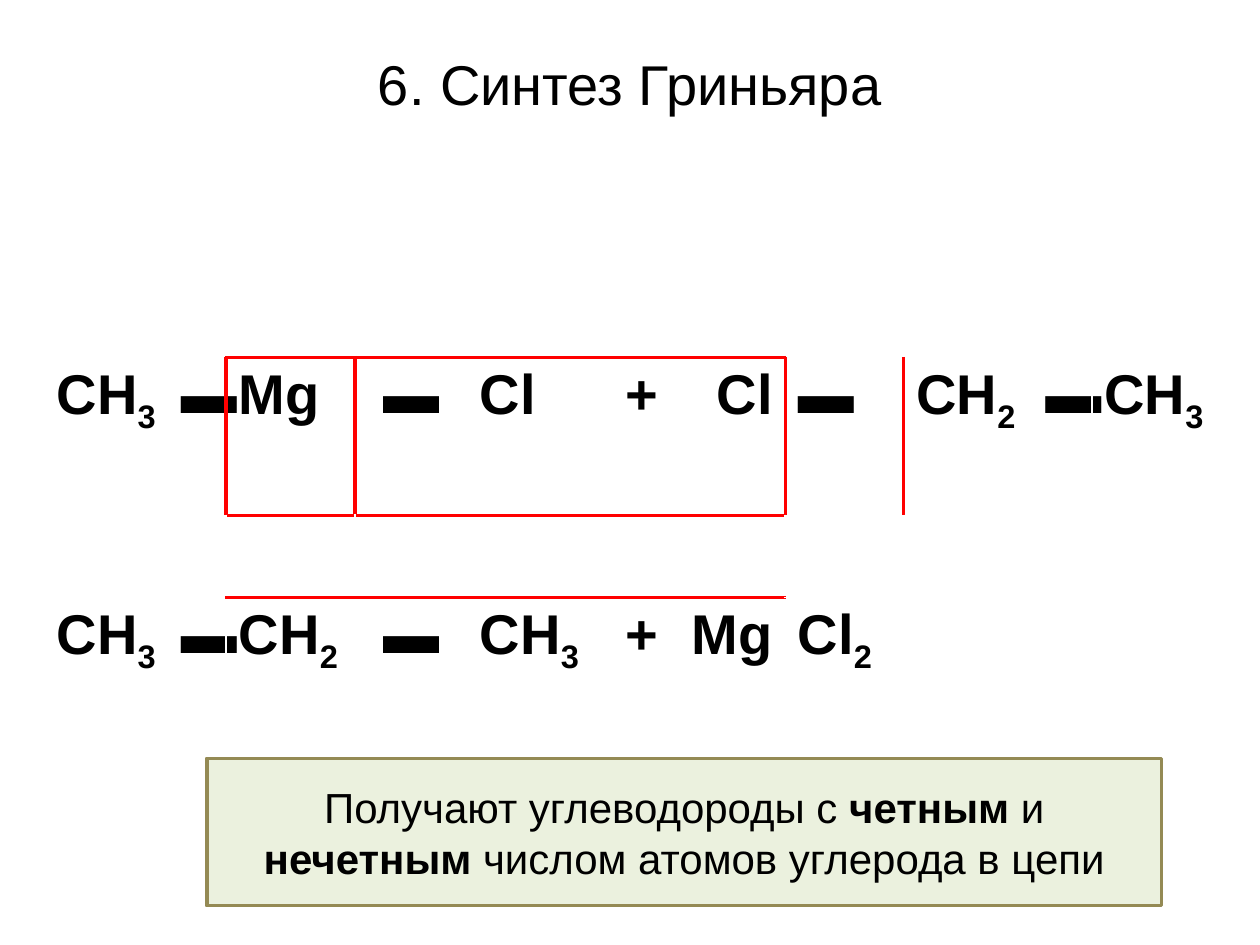
from itertools import groupby

from lxml import etree
from pptx import Presentation
from pptx.dml.color import RGBColor
from pptx.enum.shapes import MSO_SHAPE
from pptx.enum.text import MSO_ANCHOR, PP_ALIGN
from pptx.oxml.ns import qn
from pptx.util import Cm, Pt

LEFT, CENTER, RIGHT = PP_ALIGN.LEFT, PP_ALIGN.CENTER, PP_ALIGN.RIGHT
MIDDLE = MSO_ANCHOR.MIDDLE
RECTANGLE = MSO_SHAPE.RECTANGLE

BLACK, RED, PALE_GREEN, OLIVE = "000000", "FF0000", "EBF1DE", "948A54"
BOND = "▬"

COLUMN_WIDTHS = [2.6, 1.17, 2.6, 2.26, 2.6, 1.5, 2.31, 2.39, 2.6, 1.19, 2.6]
ROW_HEIGHTS = [1.65, 3.18, 1.65, 1.65]
COLUMN_ALIGNMENTS = {0: RIGHT, 3: CENTER, 5: RIGHT, 6: RIGHT, 9: CENTER}
FORMULAS = {
    1: ["СН3", BOND, "Mg", BOND, "Сl", "+", "Cl", BOND, "СН2", BOND, "СН3"],
    3: ["СН3", BOND, "СН2", BOND, "СН3", "+", "Mg", "Сl2"],
}
LEAVING_ROW, LEAVING_COLUMNS = 1, range(2, 7)
# Border tags in schema order, each with the row and column step to its neighbour
SIDES = {"a:lnL": (0, -1), "a:lnR": (0, 1), "a:lnT": (-1, 0), "a:lnB": (1, 0)}


def color(hex_string):
    return RGBColor.from_string(hex_string)


def add_span(para, text, size, bold=False, font_name="Arial"):
    span = para.add_run()
    span.text = text
    span.font.name = font_name
    span.font.size = Pt(size)
    span.font.bold = bold
    span.font.color.rgb = color(BLACK)
    return span


def add_title(page, left, top, width, height):
    title = page.shapes.title
    title.left, title.top, title.width, title.height = left, top, width, height
    title.text_frame.vertical_anchor = MIDDLE
    para = title.text_frame.paragraphs[0]
    para.alignment = CENTER
    add_span(para, "6. Синтез Гриньяра", 32)


def write_formula(para, formula):
    """Write the formula with its digits as subscripts."""
    font_name = "Times New Roman" if formula == BOND else "Arial"
    for is_digit, letters in groupby(formula, str.isdigit):
        span = add_span(para, "".join(letters), 32, True, font_name)
        if is_digit:
            span._r.get_or_add_rPr().set("baseline", "-25000")


def is_leaving(row, column):
    return row == LEAVING_ROW and column in LEAVING_COLUMNS


def frame_leaving_atoms(cell, row, column):
    """Draw a red border wherever the cell meets the edge of the leaving group."""
    properties = cell._tc.get_or_add_tcPr()
    for tag, (row_step, column_step) in SIDES.items():
        if is_leaving(row, column) != is_leaving(row + row_step, column + column_step):
            line = etree.SubElement(properties, qn(tag), w=str(Pt(2.25)))
            fill = etree.SubElement(line, qn("a:solidFill"))
            etree.SubElement(fill, qn("a:srgbClr"), val=RED)


def add_reaction(page, left, top):
    width, height = Cm(sum(COLUMN_WIDTHS)), Cm(sum(ROW_HEIGHTS))
    table = page.shapes.add_table(
        len(ROW_HEIGHTS), len(COLUMN_WIDTHS), left, top, width, height).table
    table.first_row = table.horz_banding = False
    for column, column_width in enumerate(COLUMN_WIDTHS):
        table.columns[column].width = Cm(column_width)
    for row, row_height in enumerate(ROW_HEIGHTS):
        table.rows[row].height = Cm(row_height)
        formulas = FORMULAS.get(row, [])
        for column in range(len(COLUMN_WIDTHS)):
            cell = table.cell(row, column)
            frame_leaving_atoms(cell, row, column)
            cell.fill.background()
            if column < len(formulas):
                para = cell.text_frame.paragraphs[0]
                para.alignment = COLUMN_ALIGNMENTS.get(column, LEFT)
                write_formula(para, formulas[column])


def add_conclusion(page, left, top, width, height):
    box = page.shapes.add_shape(RECTANGLE, left, top, width, height)
    box.shadow.inherit = False
    box.fill.solid()
    box.fill.fore_color.rgb = color(PALE_GREEN)
    box.line.color.rgb = color(OLIVE)
    box.line.width = Pt(2)
    box.text_frame.word_wrap = True
    box.text_frame.vertical_anchor = MIDDLE
    para = box.text_frame.paragraphs[0]
    para.alignment = CENTER
    for text, bold in [("Получают углеводороды с ", False), ("четным", True),
                       (" и ", False), ("нечетным", True),
                       (" числом атомов углерода в цепи", False)]:
        add_span(para, text, 24, bold)


def main():
    deck = Presentation()
    deck.slide_width, deck.slide_height = Cm(25.4), Cm(19.05)
    page = deck.slides.add_slide(deck.slide_layouts[5])
    add_title(page, Cm(1.27), Cm(0.76), Cm(22.86), Cm(1.83))
    add_reaction(page, Cm(0.79), Cm(5.56))
    add_conclusion(page, Cm(4.17), Cm(15.29), Cm(19.25), Cm(2.97))
    deck.save("out.pptx")


if __name__ == "__main__":
    main()
